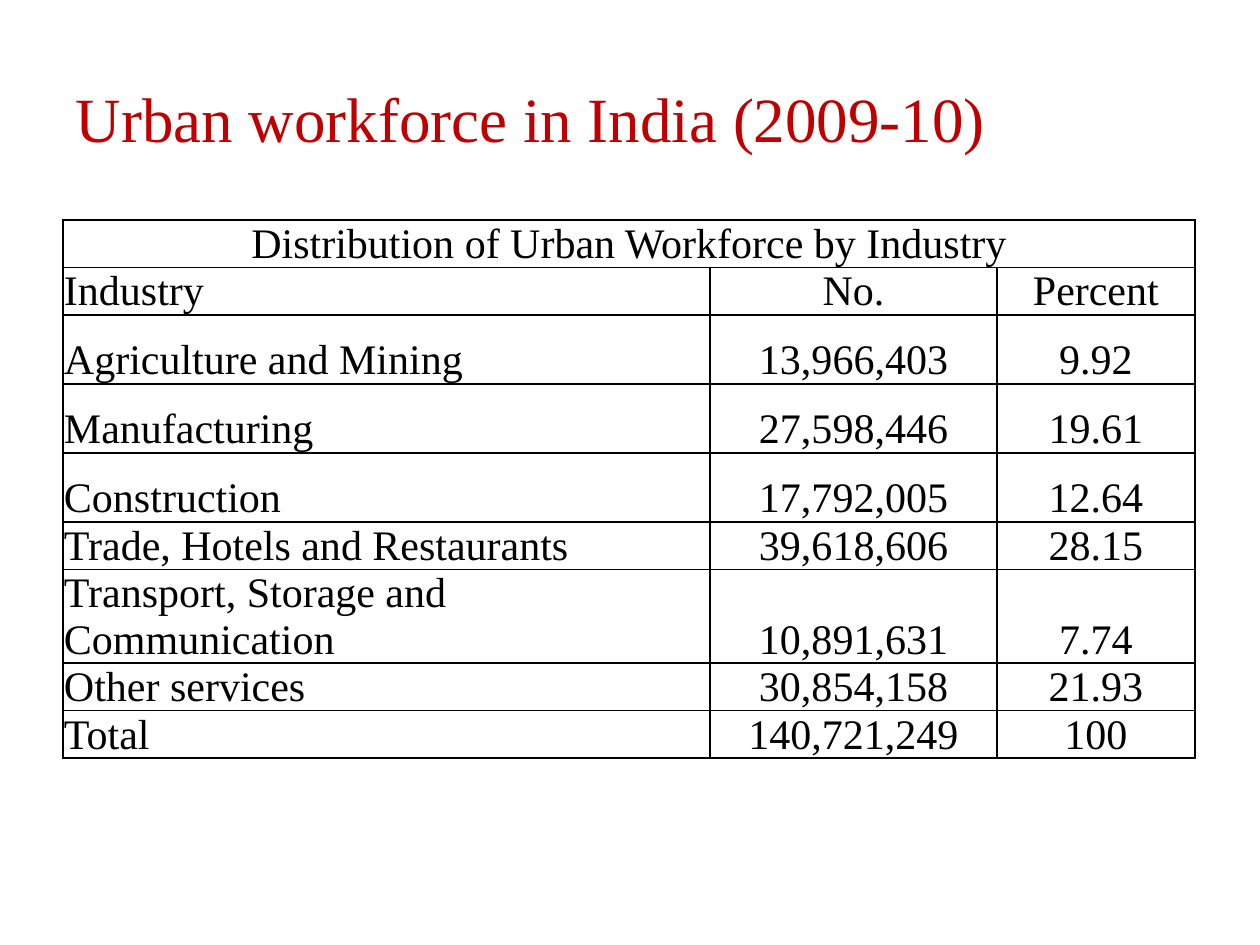
import pptx
import pptx.dml.color
import pptx.enum.text
import pptx.oxml
import pptx.oxml.ns
import pptx.util

EMU_PER_PX = 914400 / 126
FONT = "Times New Roman"
COLORS = {"title": "C00000", "text": "000000", "border": "000000"}
COLUMN_WIDTHS = [647, 287, 198]
ROW_HEIGHT = 45
TALL_ROW_HEIGHT = 69
TALL_ROWS = {"Agriculture and Mining", "Manufacturing", "Construction"}
CAPTION = "Distribution of Urban Workforce by Industry"
ROWS = [
    (CAPTION,),
    ("Industry", "No.", "Percent"),
    ("Agriculture and Mining", "13,966,403", "9.92"),
    ("Manufacturing", "27,598,446", "19.61"),
    ("Construction", "17,792,005", "12.64"),
    ("Trade, Hotels and Restaurants", "39,618,606", "28.15"),
    ("Transport, Storage and Communication", "10,891,631", "7.74"),
    ("Other services", "30,854,158", "21.93"),
    ("Total", "140,721,249", "100"),
]


def px(length):
    """Turn a length in px into EMU."""
    return pptx.util.Emu(round(length * EMU_PER_PX))


def write_text(frame, text, size=24, color="text", align="LEFT"):
    """Write one formatted paragraph into a text frame."""
    para = frame.paragraphs[0]
    para.alignment = getattr(pptx.enum.text.PP_ALIGN, align)
    span = para.add_run()
    span.text = text
    span.font.name = FONT
    span.font.size = pptx.util.Pt(size)
    span.font.color.rgb = pptx.dml.color.RGBColor.from_string(COLORS[color])


def add_title(page, text):
    """Place and format the title placeholder."""
    box = page.shapes.title
    box.left, box.top, box.width, box.height = map(px, (63, 38, 1153, 158))
    box.text_frame.vertical_anchor = pptx.enum.text.MSO_ANCHOR.MIDDLE
    write_text(box.text_frame, text, size=36, color="title")


def format_cell(cell):
    """Give a cell thin borders, no fill, tight margins and a bottom anchor."""
    cell.margin_left = cell.margin_right = cell.margin_top = px(1)
    cell.margin_bottom = 0
    cell.vertical_anchor = pptx.enum.text.MSO_ANCHOR.BOTTOM
    properties = cell._tc.get_or_add_tcPr()
    for side in ("lnL", "lnR", "lnT", "lnB"):
        properties.append(pptx.oxml.parse_xml(
            f'<a:{side} {pptx.oxml.ns.nsdecls("a")} w="{pptx.util.Pt(1)}">'
            f'<a:solidFill><a:srgbClr val="{COLORS["border"]}"/></a:solidFill>'
            f'</a:{side}>'))
    cell.fill.background()


def add_workforce_table(page):
    """Add the table of workers and shares by industry."""
    heights = [TALL_ROW_HEIGHT if row[0] in TALL_ROWS else ROW_HEIGHT for row in ROWS]
    table = page.shapes.add_table(
        len(ROWS), len(COLUMN_WIDTHS), px(63), px(220),
        px(sum(COLUMN_WIDTHS)), px(sum(heights))).table
    table.first_row = table.horz_banding = False
    for column, width in zip(table.columns, COLUMN_WIDTHS):
        column.width = px(width)
    for row, height in zip(table.rows, heights):
        row.height = px(height)
    for cell in table.iter_cells():
        format_cell(cell)
    table.cell(0, 0).merge(table.cell(0, len(COLUMN_WIDTHS) - 1))
    for row_index, row in enumerate(ROWS):
        for column_index, text in enumerate(row):
            centred = column_index > 0 or text == CAPTION
            write_text(table.cell(row_index, column_index).text_frame, text,
                       align="CENTER" if centred else "LEFT")


def main():
    """Build the slide and save the deck."""
    deck = pptx.Presentation()
    deck.slide_width, deck.slide_height = px(1260), px(945)
    page = deck.slides.add_slide(deck.slide_layouts[5])
    add_title(page, "Urban workforce in India (2009-10)")
    add_workforce_table(page)
    deck.save("out.pptx")


if __name__ == "__main__":
    main()
